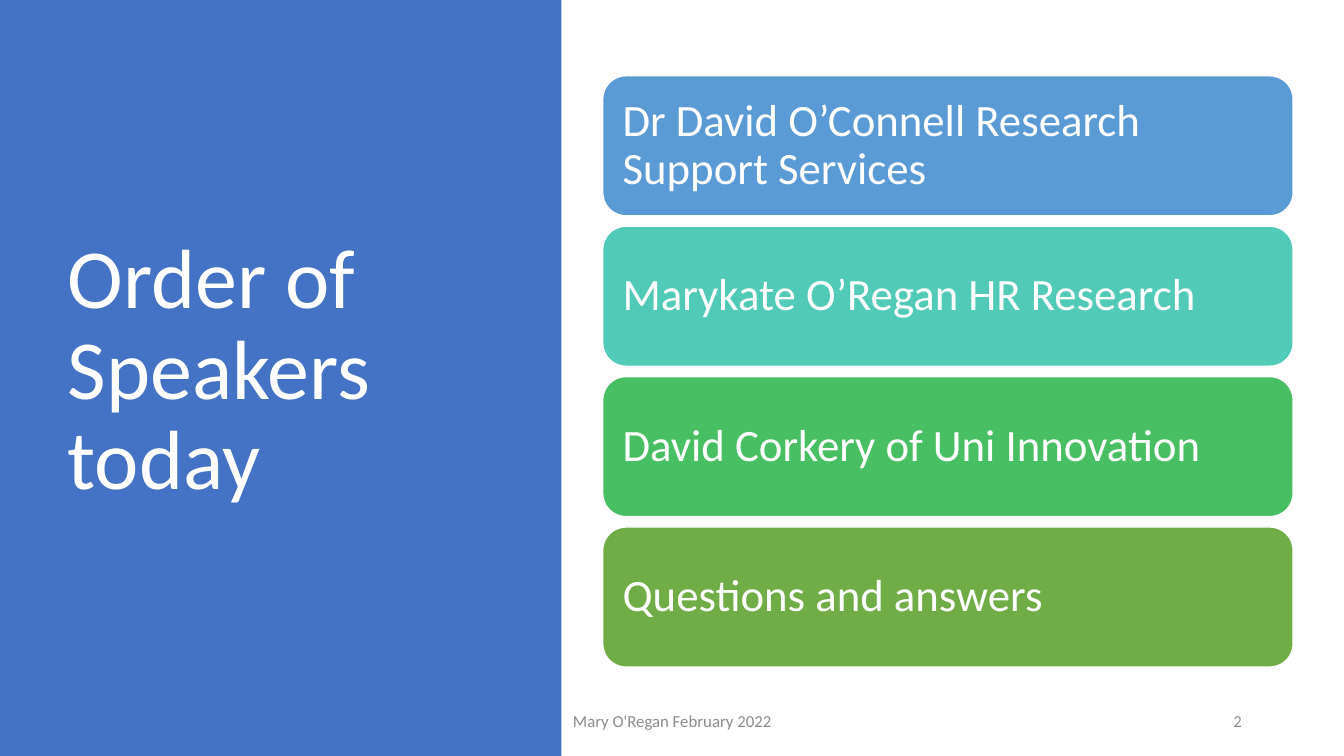
from pptx import Presentation
from pptx.dml.color import RGBColor
from pptx.enum.shapes import MSO_SHAPE
from pptx.enum.text import MSO_ANCHOR, MSO_AUTO_SIZE, PP_ALIGN
from pptx.util import Cm, Pt

COLORS = {
    "panel": "4472C4",
    "white": "FFFFFF",
    "footer": "8C8C8C",
    "blue": "5B9BD5",
    "teal": "52CAB8",
    "green": "49BF64",
    "olive": "70AD47",
}
FONT = "Calibri"
SLIDE_WIDTH, SLIDE_HEIGHT = 33.87, 19.05
PANEL_WIDTH = 14.15
SPEAKERS = [
    ("Dr David O’Connell Research Support Services", "blue"),
    ("Marykate O’Regan HR Research", "teal"),
    ("David Corkery of Uni Innovation", "green"),
    ("Questions and answers", "olive"),
]


def color(name):
    return RGBColor.from_string(COLORS[name])


def write(shape, text, size, ink="white", align=PP_ALIGN.LEFT,
          line_spacing=1.0, space_after=0, inset=None):
    frame = shape.text_frame
    frame.word_wrap = True
    frame.auto_size = MSO_AUTO_SIZE.NONE
    frame.vertical_anchor = MSO_ANCHOR.MIDDLE
    if inset is not None:
        frame.margin_left = frame.margin_right = Cm(inset)
        frame.margin_top = frame.margin_bottom = Cm(inset)
    paragraph = frame.paragraphs[0]
    paragraph.alignment = align
    paragraph.line_spacing = line_spacing
    paragraph.space_after = Pt(space_after)
    run = paragraph.add_run()
    run.text = text
    run.font.name = FONT
    run.font.size = Pt(size)
    run.font.color.rgb = color(ink)


def add_block(slide, kind, box, fill, outline=None):
    """Add a flat preset shape, outlined only if a colour is named."""
    block = slide.shapes.add_shape(kind, *map(Cm, box))
    block.shadow.inherit = False
    block.fill.solid()
    block.fill.fore_color.rgb = color(fill)
    if outline:
        block.line.color.rgb = color(outline)
        block.line.width = Pt(1)
    else:
        block.line.fill.background()
    return block


def add_title_panel(slide, box):
    left, top, width, height = box
    panel = add_block(slide, MSO_SHAPE.RECTANGLE, box, "panel")
    title = slide.shapes.title
    title.element.addprevious(panel.element)
    title.left, title.top = Cm(left + 1.45), Cm(top + 1.73)
    title.width, title.height = Cm(width - 3.58), Cm(height - 3.76)
    write(title, "Order of Speakers today", 60, line_spacing=0.9)


def add_speakers(slide, box, gap=0.26):
    left, top, width, height = box
    card_height = (height - gap * (len(SPEAKERS) - 1)) / len(SPEAKERS)
    for index, (speaker, fill) in enumerate(SPEAKERS):
        card_top = top + index * (card_height + gap)
        card = add_block(slide, MSO_SHAPE.ROUNDED_RECTANGLE,
                         (left, card_top, width, card_height), fill, "white")
        write(card, speaker, 32, line_spacing=0.9, inset=0.33)


def add_footer(slide, box):
    left, top, width, height = box
    number_width = 7.62
    parts = [
        ("Mary O'Regan February 2022", left, 11.43, PP_ALIGN.CENTER),
        ("2", left + width - number_width, number_width, PP_ALIGN.RIGHT),
    ]
    for text, part_left, part_width, align in parts:
        part = slide.shapes.add_textbox(
            Cm(part_left), Cm(top), Cm(part_width), Cm(height))
        write(part, text, 12, ink="footer", align=align, space_after=6)


def main():
    presentation = Presentation()
    presentation.slide_width = Cm(SLIDE_WIDTH)
    presentation.slide_height = Cm(SLIDE_HEIGHT)
    slide = presentation.slides.add_slide(
        presentation.slide_layouts.get_by_name("Title Only"))
    add_title_panel(slide, (0, 0, PANEL_WIDTH, SLIDE_HEIGHT))
    add_footer(slide, (11.23, 17.65, 20.32, 1.02))
    add_speakers(slide, (15.19, 1.91, 17.4, 14.9))
    presentation.save("out.pptx")


if __name__ == "__main__":
    main()
